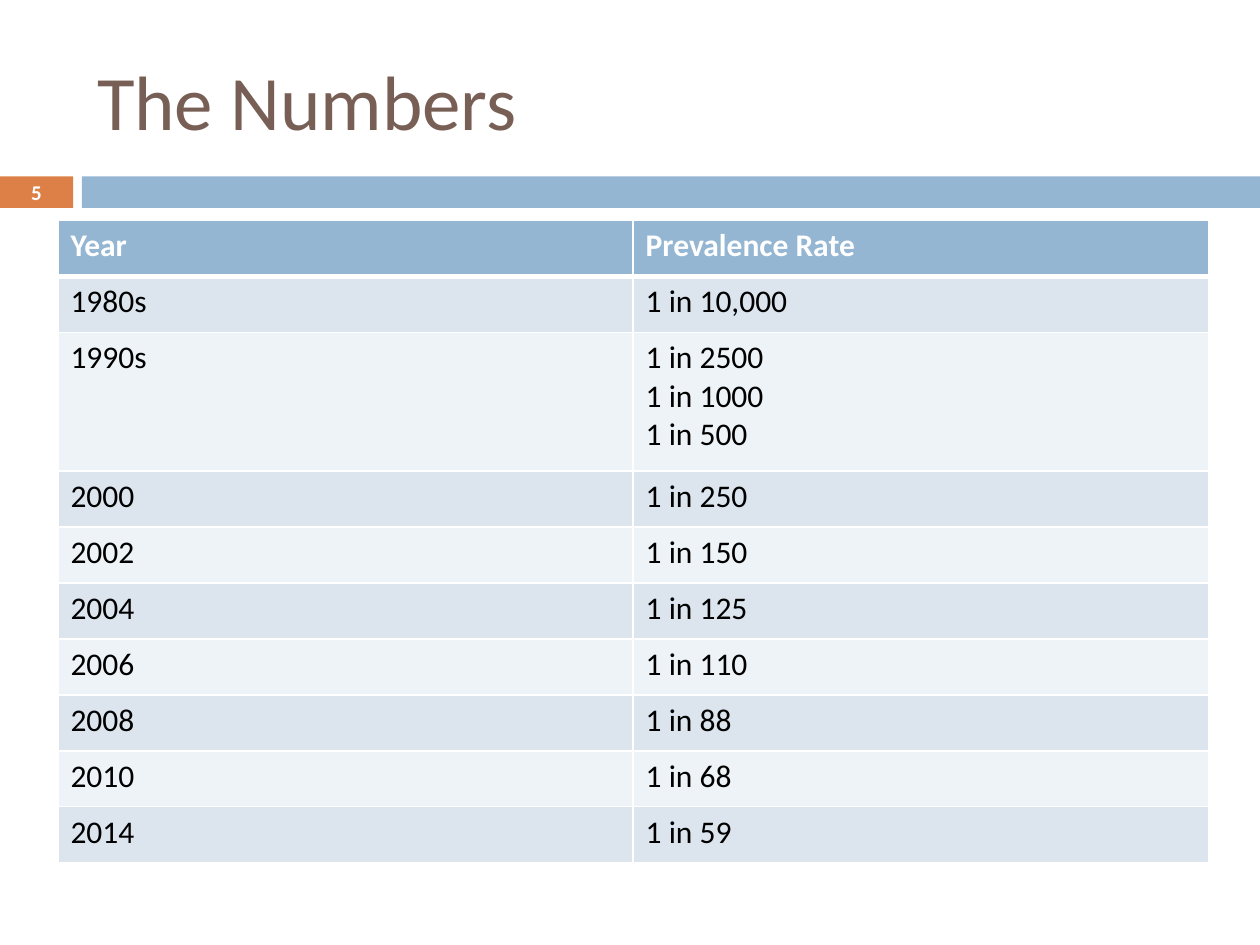
import pptx
import pptx.util
import pptx.dml.color
import pptx.enum.shapes
import pptx.enum.text
import pptx.oxml
import pptx.oxml.ns

Inches, Pt = pptx.util.Inches, pptx.util.Pt
Align = pptx.enum.text.PP_ALIGN
Middle = pptx.enum.text.MSO_ANCHOR.MIDDLE

TITLE = "The Numbers"
PAGE = "5"
HEAD = ("Year", "Prevalence Rate")
RATES = [
    ("1980s", "1 in 10,000"),
    ("1990s", "1 in 2500\n1 in 1000\n1 in 500"),
    ("2000", "1 in 250"),
    ("2002", "1 in 150"),
    ("2004", "1 in 125"),
    ("2006", "1 in 110"),
    ("2008", "1 in 88"),
    ("2010", "1 in 68"),
    ("2014", "1 in 59"),
]

THEME = {
    "font": "Calibri",
    "blue": "94B6D2", "orange": "DD8047", "brown": "775F55",
    "white": "FFFFFF", "black": "000000",
    "bands": ("DCE5EE", "EEF3F7"),
    "title": 44, "cell": 18, "page": 12,
}

# left, top, width, height in inches
TITLE_BOX = (0.67, 0.25, 8.92, 1.08)
PAGE_BOX = (0, 1.39, 0.58, 0.27)
BARS = [((0, 1.4, 0.58, 0.25), "orange"), ((0.65, 1.4, 9.35, 0.25), "blue")]
GRID_BOX = (0.46, 1.75, 9.13, 5.1)
TALL = 1.1


def rgb(code):
    return pptx.dml.color.RGBColor.from_string(code)


def paint(item, code):
    item.fill.solid()
    item.fill.fore_color.rgb = rgb(code)


def write(frame, text, size, color, bold=False, align=Align.LEFT):
    frame.text = text
    look = {"name": THEME["font"], "size": Pt(size), "bold": bold}
    for para in frame.paragraphs:
        para.alignment = align
        for run in para.runs:
            for key, value in look.items():
                setattr(run.font, key, value)
            run.font.color.rgb = rgb(THEME[color])


def place(shape, box):
    for key, value in zip(("left", "top", "width", "height"), box):
        setattr(shape, key, Inches(value))


def edge(cell, widths):
    """Give a cell white borders; widths maps L, R, T, B to points."""
    props = cell._tc.get_or_add_tcPr()
    for side, width in widths.items():
        props.append(pptx.oxml.parse_xml(
            f'<a:ln{side} {pptx.oxml.ns.nsdecls("a")} w="{Pt(width)}"><a:solidFill>'
            f'<a:srgbClr val="{THEME["white"]}"/></a:solidFill></a:ln{side}>'))


def add_bars(slide):
    for box, color in BARS:
        bar = slide.shapes.add_shape(
            pptx.enum.shapes.MSO_SHAPE.RECTANGLE, *map(Inches, box))
        bar.shadow.inherit = False
        bar.line.fill.background()
        paint(bar, THEME[color])


def add_title(slide):
    title = slide.shapes.title
    place(title, TITLE_BOX)
    write(title.text_frame, TITLE, THEME["title"], "brown")
    title.text_frame.vertical_anchor = Middle


def add_grid(slide):
    rows = [HEAD] + RATES
    grid = slide.shapes.add_table(
        len(rows), len(HEAD), *map(Inches, GRID_BOX)).table
    for col in grid.columns:
        col.width = Inches(GRID_BOX[2] / len(HEAD))
    short = (GRID_BOX[3] - TALL) / (len(rows) - 1)
    for i, row in enumerate(rows):
        top = i == 0
        grid.rows[i].height = Inches(TALL if "\n" in row[1] else short)
        back = THEME["blue"] if top else THEME["bands"][(i - 1) % 2]
        for j, text in enumerate(row):
            cell = grid.cell(i, j)
            edge(cell, {"L": 1, "R": 1, "T": 3 if i == 1 else 1,
                        "B": 3 if top else 1})
            paint(cell, back)
            write(cell.text_frame, text, THEME["cell"],
                  "white" if top else "black", top)


def add_page(slide):
    frame = slide.shapes.add_textbox(*map(Inches, PAGE_BOX)).text_frame
    margins = ("left", "right", "top", "bottom")
    for side in margins:
        setattr(frame, f"margin_{side}", 0)
    frame.word_wrap = True
    frame.vertical_anchor = Middle
    write(frame, PAGE, THEME["page"], "white", True, Align.CENTER)


def main():
    deck = pptx.Presentation()
    deck.slide_width, deck.slide_height = Inches(10), Inches(7.5)
    slide = deck.slides.add_slide(deck.slide_layouts[5])
    for step in (add_bars, add_title, add_grid, add_page):
        step(slide)
    deck.save("out.pptx")


if __name__ == "__main__":
    main()
